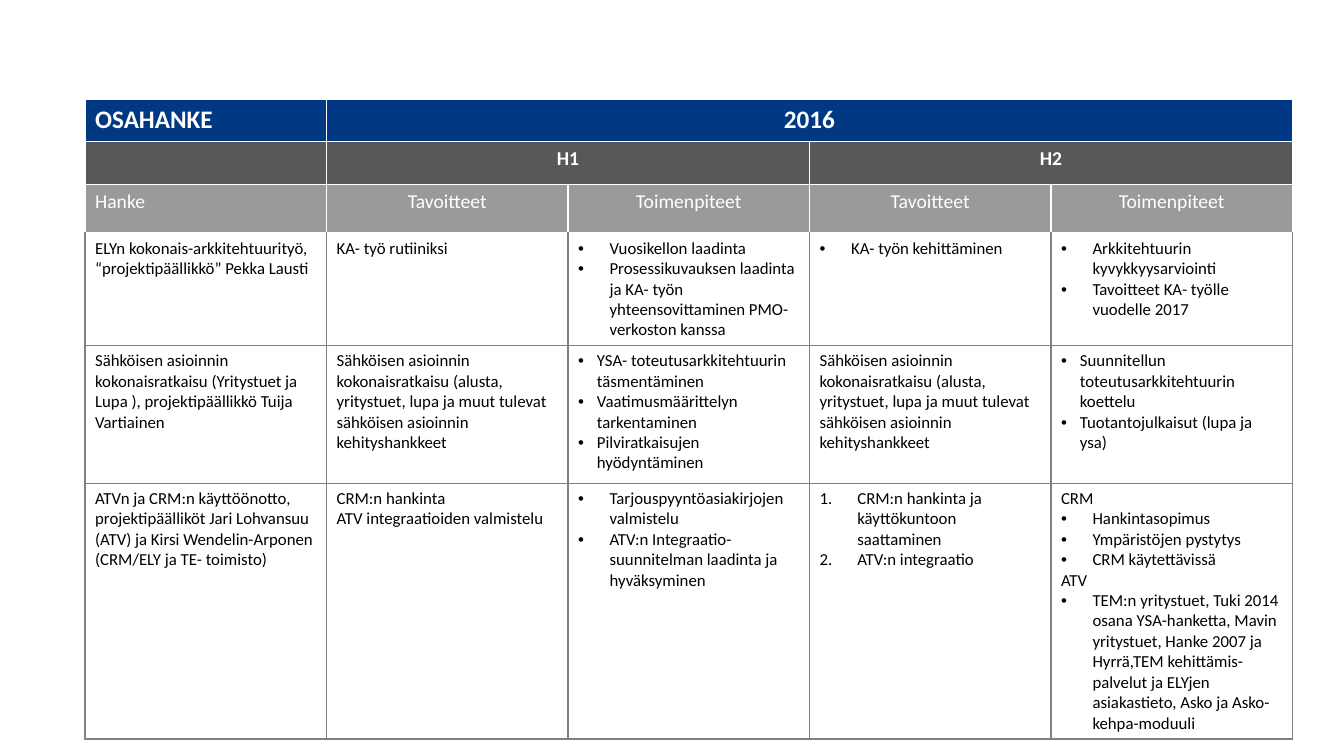
import pptx
import pptx.util
import pptx.dml.color
import pptx.enum.text
import pptx.oxml
import pptx.oxml.ns

PX = 9525
SIZE = (1280, 720)
LEFT, TOP = 81, 95
COLS = [230] * 5
ROWS = [40, 41, 46, 107, 131, 231]
THEME = {
    "font": "Calibri",
    "white": "FFFFFF",
    "black": "000000",
    "grey": "808080",
    "bands": ["003883", "58585A", "9A9A9D"],
    "sizes": [18, 14, 14],
    "body": 12,
}

# Header: row -> list of (column, columns spanned, label)
HEADS = [
    [(0, 1, "OSAHANKE"), (1, 4, "2016")],
    [(1, 2, "H1"), (3, 2, "H2")],
    [(0, 1, "Hanke"), (1, 1, "Tavoitteet"), (2, 1, "Toimenpiteet"),
     (3, 1, "Tavoitteet"), (4, 1, "Toimenpiteet")],
]

# Body: each cell is a list of (list kind, text)
GOAL = ("", "Sähköisen asioinnin kokonaisratkaisu (alusta, yritystuet, lupa ja muut "
            "tulevat sähköisen asioinnin kehityshankkeet")
BODY = [
    [
        [("", "ELYn kokonais-arkkitehtuurityö, “projektipäällikkö” Pekka Lausti")],
        [("", "KA- työ rutiiniksi")],
        [("wide", "Vuosikellon laadinta"),
         ("wide", "Prosessikuvauksen laadinta ja KA- työn yhteensovittaminen PMO- "
                  "verkoston kanssa")],
        [("wide", "KA- työn kehittäminen")],
        [("wide", "Arkkitehtuurin kyvykkyysarviointi"),
         ("wide", "Tavoitteet KA- työlle vuodelle 2017")],
    ],
    [
        [("", "Sähköisen asioinnin kokonaisratkaisu (Yritystuet ja Lupa ), "
              "projektipäällikkö Tuija Vartiainen")],
        [GOAL],
        [("tight", "YSA- toteutusarkkitehtuurin täsmentäminen"),
         ("tight", "Vaatimusmäärittelyn tarkentaminen"),
         ("tight", "Pilviratkaisujen hyödyntäminen")],
        [GOAL],
        [("tight", "Suunnitellun toteutusarkkitehtuurin koettelu"),
         ("tight", "Tuotantojulkaisut (lupa ja ysa)")],
    ],
    [
        [("", "ATVn ja CRM:n käyttöönotto, projektipäälliköt Jari Lohvansuu (ATV) ja "
              "Kirsi Wendelin-Arponen (CRM/ELY ja TE- toimisto)")],
        [("", "CRM:n hankinta"), ("", "ATV integraatioiden valmistelu")],
        [("wide", "Tarjouspyyntöasiakirjojen valmistelu"),
         ("wide", "ATV:n Integraatio-suunnitelman laadinta ja hyväksyminen")],
        [("number", "CRM:n hankinta ja käyttökuntoon saattaminen"),
         ("number", "ATV:n integraatio")],
        [("", "CRM"),
         ("wide", "Hankintasopimus"),
         ("wide", "Ympäristöjen pystytys"),
         ("wide", "CRM käytettävissä"),
         ("", "ATV"),
         ("wide", "TEM:n yritystuet, Tuki 2014 osana YSA-hanketta, Mavin yritystuet, "
                  "Hanke 2007 ja Hyrrä,TEM kehittämis-palvelut ja ELYjen asiakastieto, "
                  "Asko ja Asko-kehpa-moduuli")],
    ],
]

DOT = [("a:buFont", {"typeface": "Arial"}), ("a:buChar", {"char": "•"})]
LISTS = {
    "wide": (30, DOT),
    "tight": (18, DOT),
    "number": (36, [("a:buAutoNum", {"type": "arabicPeriod"})]),
}


def tint(code):
    return pptx.dml.color.RGBColor.from_string(code)


def add(parent, tag, attrs):
    node = parent.makeelement(pptx.oxml.ns.qn(tag), attrs)
    parent.append(node)
    return node


def frame(cell, top, rest):
    """Draw the four borders of a cell; call before its fill is set."""
    props = cell._tc.get_or_add_tcPr()
    for side, code in (("L", rest), ("R", rest), ("T", top), ("B", rest)):
        line = add(props, "a:ln" + side, {"w": "12700"})
        add(add(line, "a:solidFill", {}), "a:srgbClr", {"val": code})


def write(para, text, kind="", align="LEFT", **look):
    para.text = text
    para.alignment = getattr(pptx.enum.text.PP_ALIGN, align)
    if kind:
        indent, marks = LISTS[kind]
        props = para._p.get_or_add_pPr()
        props.set("marL", str(indent * PX))
        props.set("indent", str(-indent * PX))
        for tag, attrs in marks:
            add(props, tag, attrs)
    font = para.runs[0].font
    font.color.rgb = tint(look.pop("color"))
    font.name = THEME["font"]
    for name, value in look.items():
        setattr(font, name, value)


def head(grid):
    for row, labels in enumerate(HEADS):
        for col in range(len(COLS)):
            cell = grid.cell(row, col)
            frame(cell, THEME["white"], THEME["white"])
            cell.fill.solid()
            cell.fill.fore_color.rgb = tint(THEME["bands"][row])
        for col, span, text in labels:
            cell = grid.cell(row, col)
            if span > 1:
                cell.merge(grid.cell(row, col + span - 1))
            write(cell.text_frame.paragraphs[0], text,
                  align="CENTER" if col else "LEFT", color=THEME["white"],
                  size=pptx.util.Pt(THEME["sizes"][row]), bold=row < 2)


def body(grid):
    for row, cells in enumerate(BODY):
        for col, items in enumerate(cells):
            cell = grid.cell(row + len(HEADS), col)
            frame(cell, THEME["grey"] if row else THEME["white"], THEME["grey"])
            cell.fill.background()
            for num, (kind, text) in enumerate(items):
                box = cell.text_frame
                para = box.add_paragraph() if num else box.paragraphs[0]
                write(para, text, kind, color=THEME["black"],
                      size=pptx.util.Pt(THEME["body"]), bold=False)


def main():
    deck = pptx.Presentation()
    deck.slide_width, deck.slide_height = (side * PX for side in SIZE)
    slide = deck.slides.add_slide(deck.slide_layouts[6])
    area = (LEFT, TOP, sum(COLS), sum(ROWS))
    grid = slide.shapes.add_table(len(ROWS), len(COLS), *(n * PX for n in area)).table
    grid.first_row = grid.horz_banding = False
    for col, width in zip(grid.columns, COLS):
        col.width = width * PX
    for row, height in zip(grid.rows, ROWS):
        row.height = height * PX
    head(grid)
    body(grid)
    deck.save("out.pptx")


if __name__ == "__main__":
    main()
